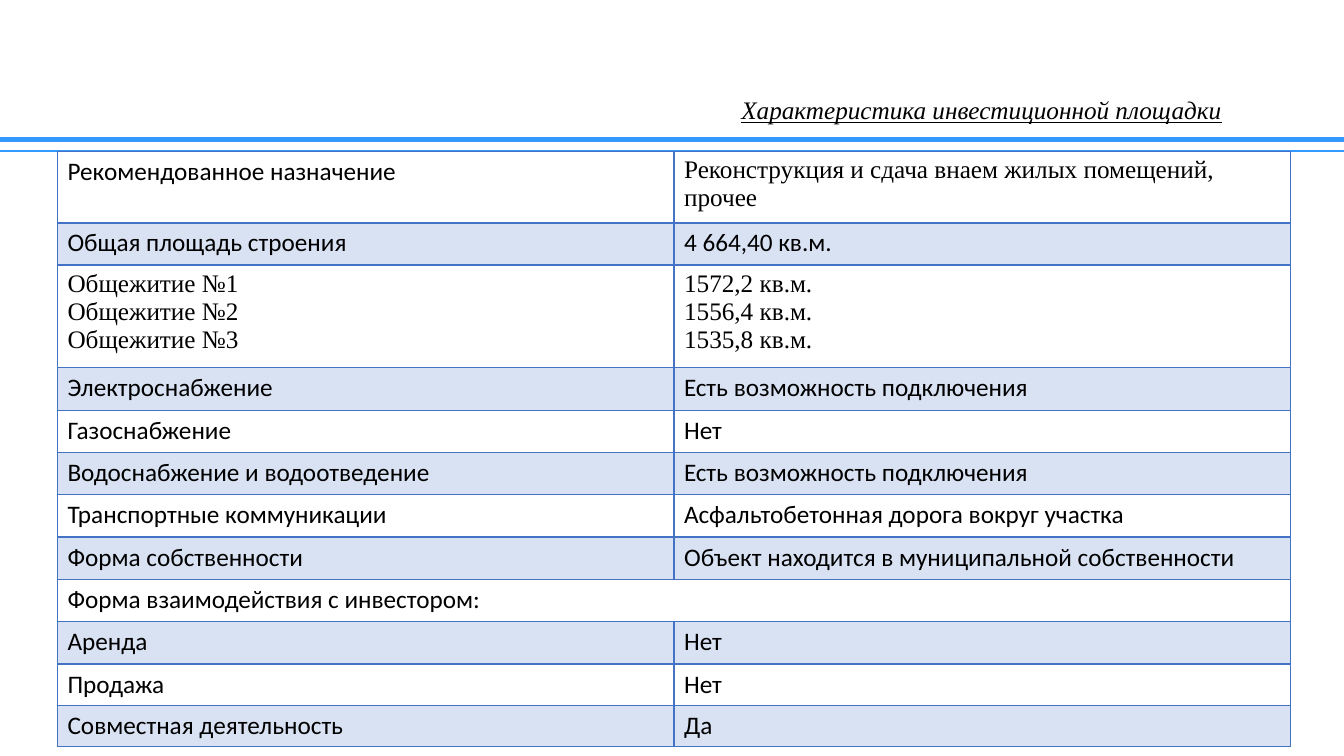
from dataclasses import dataclass

from lxml.etree import SubElement
from pptx import Presentation
from pptx.dml.color import RGBColor as Rgb
from pptx.enum.shapes import MSO_CONNECTOR as Connector
from pptx.enum.text import MSO_ANCHOR as Anchor, PP_ALIGN as Align
from pptx.oxml import parse_xml
from pptx.oxml.ns import nsdecls, qn
from pptx.util import Inches, Pt


@dataclass(frozen=True)
class Theme:
    ink: str = "000000"
    rule: str = "3399FF"
    grid: str = "4472C4"
    band_alpha: int = 20000
    size: int = 18
    sans: str = "Calibri"
    serif: str = "Times New Roman"


THEME = Theme()
SLIDE_WIDTH, SLIDE_HEIGHT = 13.33, 7.5
HEADING = "Характеристика инвестиционной площадки"
FEATURES = [
    ("Рекомендованное назначение", "Реконструкция и сдача внаем жилых помещений, прочее"),
    ("Общая площадь строения", "4 664,40 кв.м."),
    ("Общежитие №1\nОбщежитие №2\nОбщежитие №3", "1572,2 кв.м.\n1556,4 кв.м.\n1535,8 кв.м."),
    ("Электроснабжение", "Есть возможность подключения"),
    ("Газоснабжение", "Нет"),
    ("Водоснабжение и водоотведение", "Есть возможность подключения"),
    ("Транспортные коммуникации", "Асфальтобетонная дорога вокруг участка"),
    ("Форма собственности", "Объект находится в муниципальной собственности"),
    ("Форма взаимодействия с инвестором:",),
    ("Аренда", "Нет"),
    ("Продажа", "Нет"),
    ("Совместная деятельность", "Да"),
]
ROW_HEIGHTS = [0.71, 0.42, 1.02] + [0.42] * 7 + [0.41] * 2
SERIF_CELLS = {(0, 1), (2, 0), (2, 1)}


def add_text(paragraph, text, typeface):
    run = paragraph.add_run()
    run.text = text
    run.font.name = typeface
    run.font.size = Pt(THEME.size)
    run.font.bold = False
    run.font.color.rgb = Rgb.from_string(THEME.ink)
    return run


def place_heading(slide, left, top, width, height):
    title = slide.shapes.title
    title.left, title.top = Inches(left), Inches(top)
    title.width, title.height = Inches(width), Inches(height)
    title.text_frame.vertical_anchor = Anchor.MIDDLE
    line = title.text_frame.paragraphs[0]
    line.alignment = Align.CENTER
    line.line_spacing = 0.9
    heading = add_text(line, HEADING, THEME.serif)
    heading.font.italic = heading.font.underline = True


def place_rules(slide, left, top, width, gap):
    for offset, weight in ((0, 3.5), (gap, 1.5)):
        y = Inches(top + offset)
        rule = slide.shapes.add_connector(
            Connector.STRAIGHT, Inches(left), y, Inches(left + width), y)
        rule.line.color.rgb = Rgb.from_string(THEME.rule)
        rule.line.width = Pt(weight)
        SubElement(rule._element.spPr, qn("a:effectLst"))


def paint_cell(cell, row):
    if row % 2:
        cell.fill.solid()
        cell.fill.fore_color.rgb = Rgb.from_string(THEME.grid)
    else:
        cell.fill.background()
    properties = cell._tc.get_or_add_tcPr()
    for color in properties.iter(qn("a:srgbClr")):
        SubElement(color, qn("a:alpha"), val=str(THEME.band_alpha))
    weights = {"L": 1, "R": 1, "T": 2 if row == 1 else 1, "B": 2 if row == 0 else 1}
    for position, (side, weight) in enumerate(weights.items()):
        properties.insert(position, parse_xml(
            f'<a:ln{side} {nsdecls("a")} w="{Pt(weight)}"><a:solidFill>'
            f'<a:srgbClr val="{THEME.grid}"/></a:solidFill></a:ln{side}>'))


def place_features(slide, left, top, width):
    features = slide.shapes.add_table(
        len(FEATURES), 2, Inches(left), Inches(top),
        Inches(width), Inches(sum(ROW_HEIGHTS))).table
    features.first_row = features.horz_banding = False
    for column in features.columns:
        column.width = Inches(width / 2)
    for row, (entry, height) in enumerate(zip(FEATURES, ROW_HEIGHTS)):
        features.rows[row].height = Inches(height)
        if len(entry) == 1:
            features.cell(row, 0).merge(features.cell(row, 1))
        for column in range(2):
            paint_cell(features.cell(row, column), row)
        for column, content in enumerate(entry):
            frame = features.cell(row, column).text_frame
            typeface = THEME.serif if (row, column) in SERIF_CELLS else THEME.sans
            for number, text in enumerate(content.split("\n")):
                line = frame.add_paragraph() if number else frame.paragraphs[0]
                add_text(line, text, typeface)


def main():
    deck = Presentation()
    deck.slide_width, deck.slide_height = Inches(SLIDE_WIDTH), Inches(SLIDE_HEIGHT)
    slide = deck.slides.add_slide(deck.slide_layouts[5])
    place_rules(slide, 0, 1.38, SLIDE_WIDTH, 0.12)
    place_heading(slide, 6.67, 0.97, 6.13, 0.27)
    place_features(slide, 0.57, 1.5, 12.23)
    deck.save("out.pptx")


if __name__ == "__main__":
    main()
